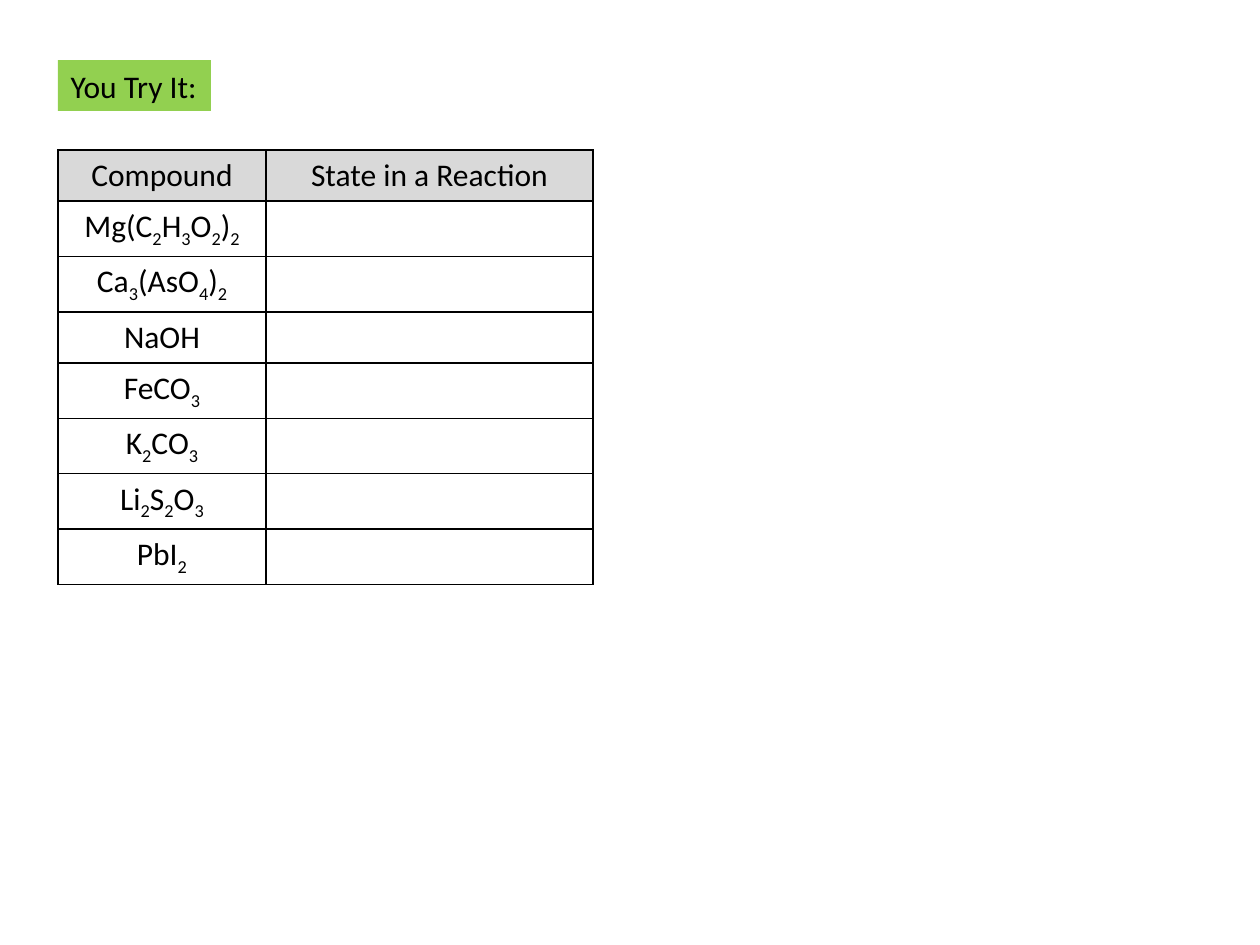
"""Build a solubility practice slide with a title label and a table of compounds."""
from dataclasses import dataclass
from itertools import groupby

from lxml.etree import SubElement
from pptx import Presentation
from pptx.dml.color import RGBColor as Rgb
from pptx.enum.text import MSO_ANCHOR as Anchor, MSO_AUTO_SIZE as AutoSize, PP_ALIGN as Align
from pptx.oxml import parse_xml
from pptx.oxml.ns import nsdecls, qn
from pptx.util import Pt

SCALE = 914400 / 126
COMPOUNDS = ["Mg(C2H3O2)2", "Ca3(AsO4)2", "NaOH", "FeCO3", "K2CO3", "Li2S2O3", "PbI2"]


@dataclass(frozen=True)
class Theme:
    font: str = "Calibri"
    size: int = 18
    ink: str = "000000"
    label: str = "92D050"
    header: str = "D9D9D9"
    border: int = 1


def emu(px):
    return round(px * SCALE)


def write(frame, text, *, theme, align=Align.LEFT, subscripts=False):
    para = frame.paragraphs[0]
    para.alignment = align
    pieces = groupby(text, key=lambda letter: subscripts and letter.isdigit())
    for lowered, letters in pieces:
        span = para.add_run()
        span.text = "".join(letters)
        span.font.name = theme.font
        span.font.size = Pt(theme.size)
        span.font.color.rgb = Rgb.from_string(theme.ink)
        if lowered:
            span._r.get_or_add_rPr().set("baseline", "-25000")
    if not text:
        para.font.size = Pt(theme.size)


class Page:
    def __init__(self, slide, theme):
        self.slide = slide
        self.theme = theme

    def title(self, text, left, top, width, height):
        box = self.slide.shapes.title
        box.left, box.top, box.width, box.height = map(emu, (left, top, width, height))
        box.fill.solid()
        box.fill.fore_color.rgb = Rgb.from_string(self.theme.label)
        frame = box.text_frame
        frame.word_wrap = False
        frame.auto_size = AutoSize.NONE
        frame.vertical_anchor = Anchor.MIDDLE
        write(frame, text, theme=self.theme)

    def table(self, rows, left, top, widths, row_height):
        place = map(emu, (left, top, sum(widths), row_height * len(rows)))
        table = self.slide.shapes.add_table(len(rows), len(widths), *place).table
        table.first_row = table.horz_banding = False
        for column, width in zip(table.columns, widths):
            column.width = emu(width)
        for index, row in enumerate(rows):
            table.rows[index].height = emu(row_height)
            for cell, text in zip(table.rows[index].cells, row):
                self.cell(cell, text, header=index == 0)

    def cell(self, cell, text, header):
        cell.vertical_anchor = Anchor.MIDDLE
        if header:
            cell.fill.solid()
            cell.fill.fore_color.rgb = Rgb.from_string(self.theme.header)
        else:
            cell.fill.background()
        write(cell.text_frame, text, theme=self.theme, align=Align.CENTER, subscripts=True)
        for position, side in enumerate("LRTB"):
            line = parse_xml(f'<a:ln{side} {nsdecls("a")} w="{Pt(self.theme.border)}"/>')
            fill = SubElement(line, qn("a:solidFill"))
            SubElement(fill, qn("a:srgbClr"), val=self.theme.ink)
            cell._tc.get_or_add_tcPr().insert(position, line)


def main():
    deck = Presentation()
    deck.slide_width, deck.slide_height = emu(1260), emu(945)
    page = Page(deck.slides.add_slide(deck.slide_layouts[5]), Theme())
    page.title("You Try It:", 58, 60, 153, 51)
    rows = [("Compound", "State in a Reaction")] + [(name, "") for name in COMPOUNDS]
    page.table(rows, 58, 150, (208, 327), 51)
    deck.save("out.pptx")


if __name__ == "__main__":
    main()
